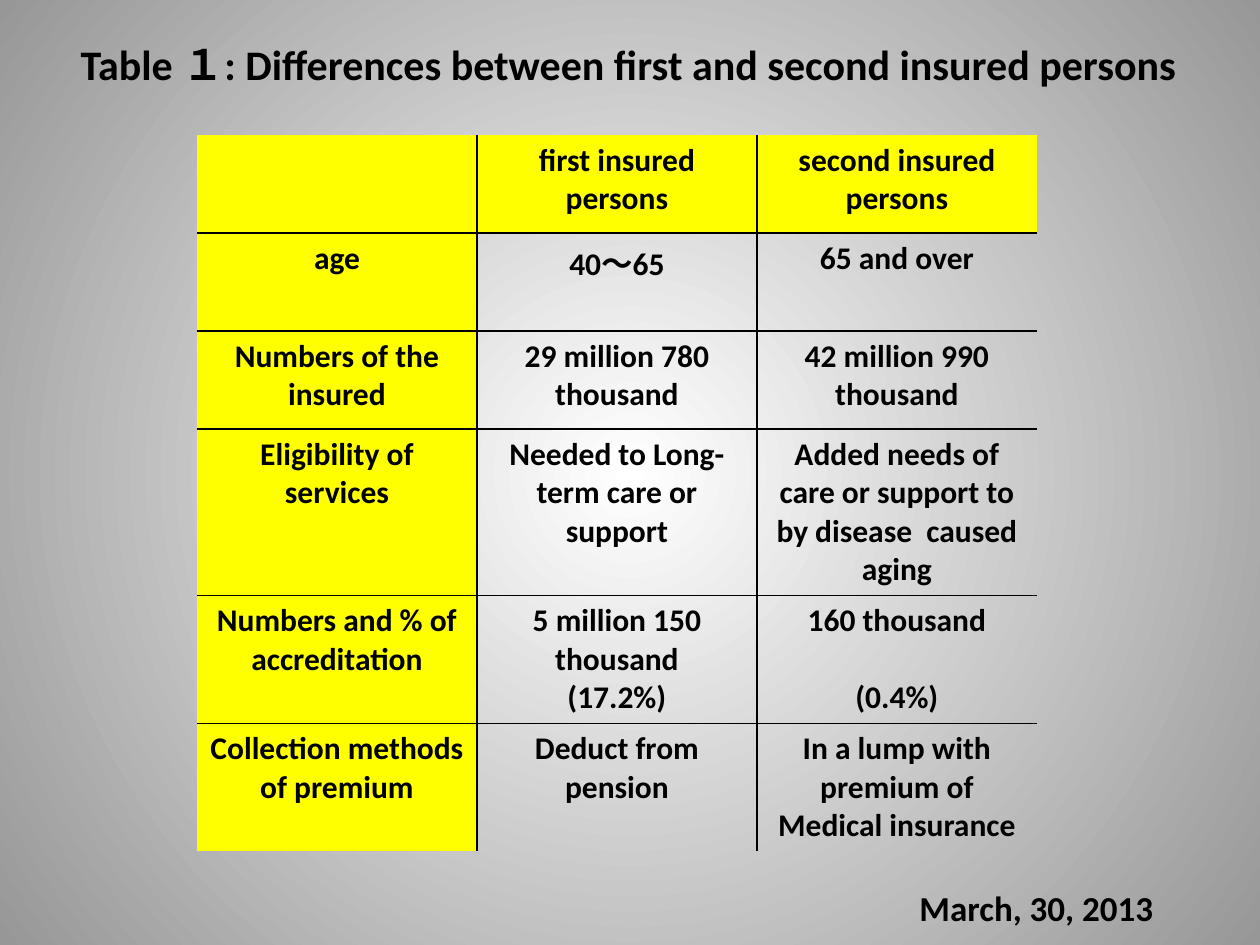
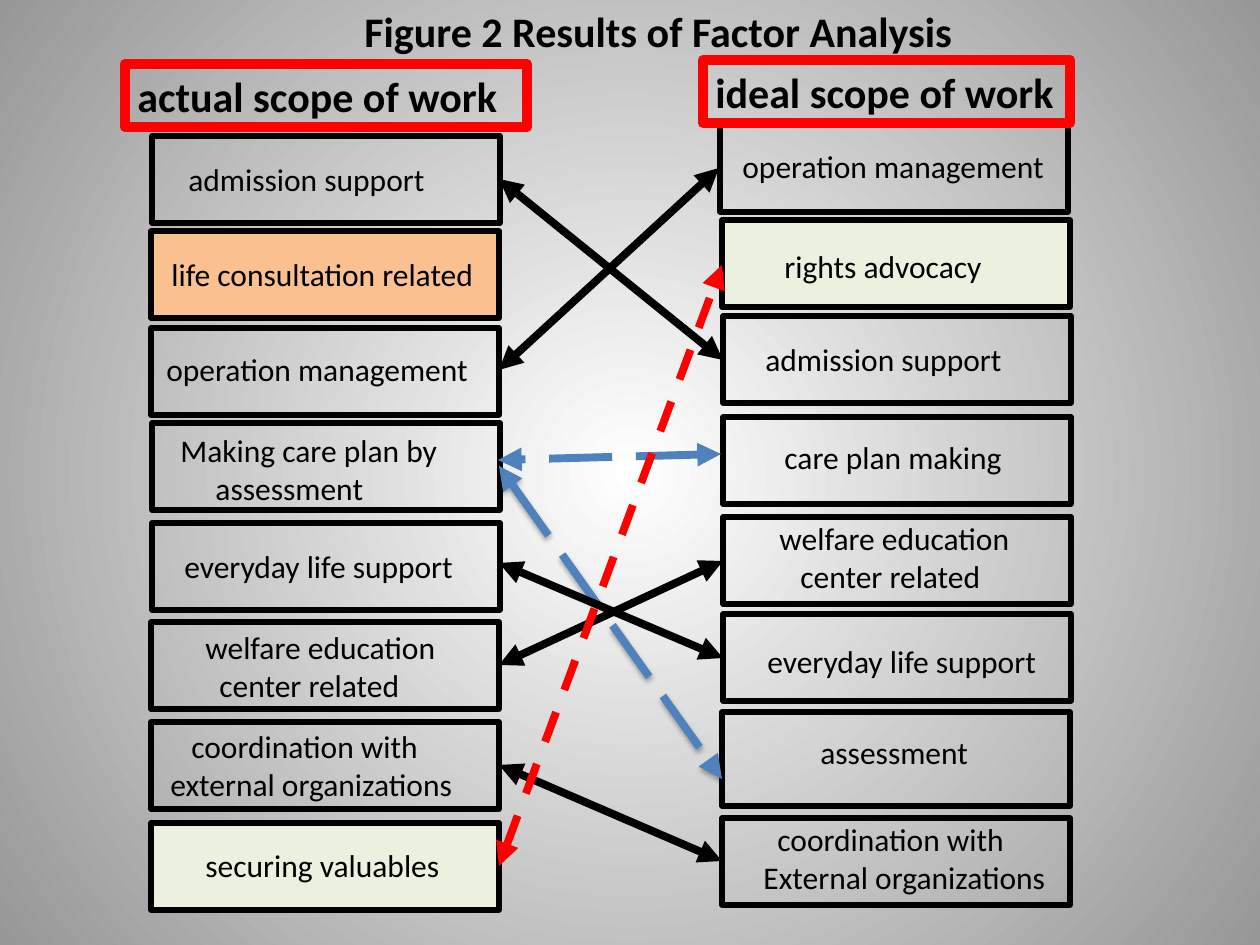
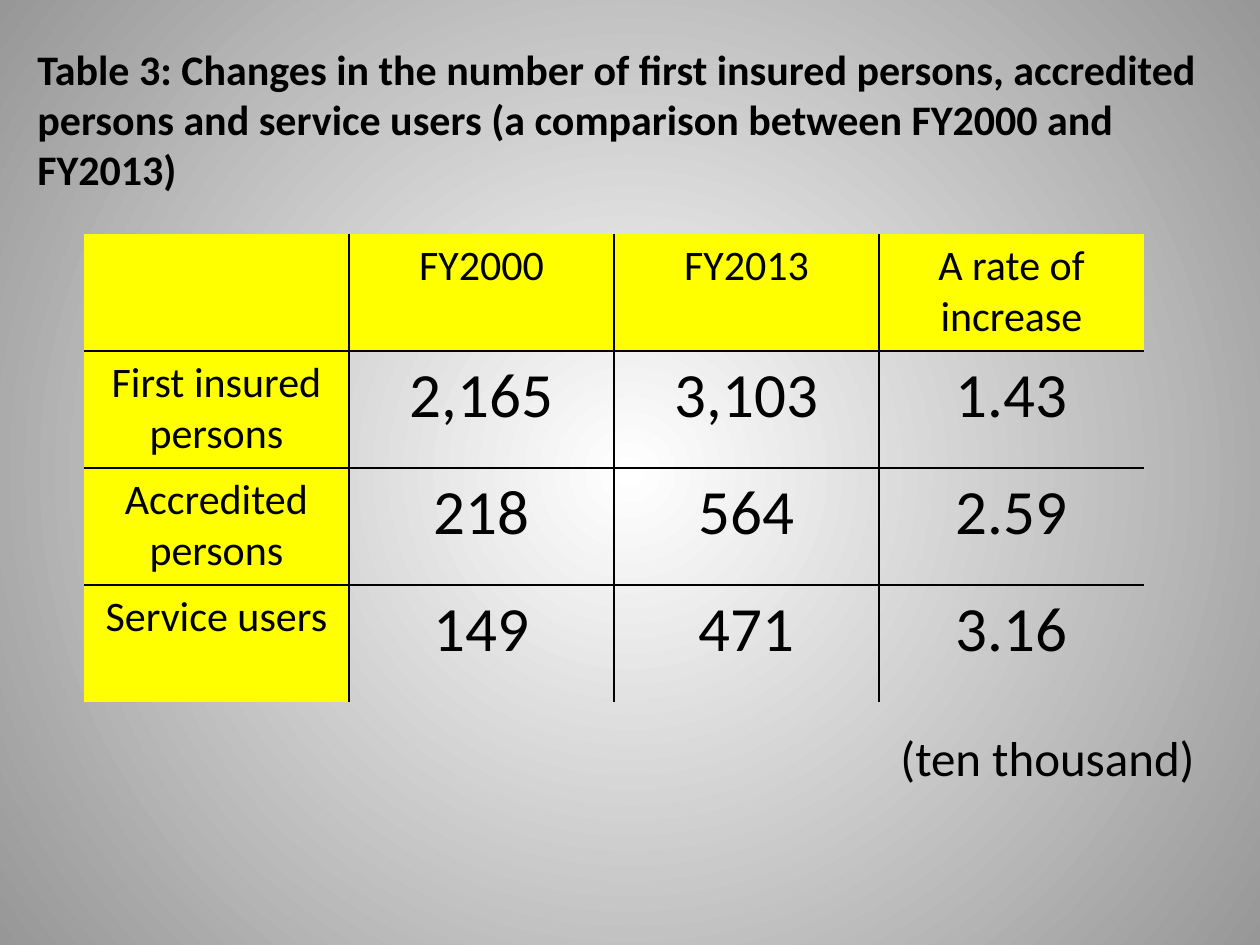
from dataclasses import dataclass

from lxml import etree
from pptx import Presentation
from pptx.dml.color import RGBColor
from pptx.enum.dml import MSO_LINE
from pptx.enum.shapes import MSO_CONNECTOR, MSO_SHAPE
from pptx.enum.text import MSO_AUTO_SIZE, PP_ALIGN
from pptx.oxml.ns import qn
from pptx.util import Emu, Pt

# Shared look
FONT = "Calibri"
BLACK, RED, BLUE = "000000", "FF0000", "4F81BD"
YELLOW, ORANGE, GREEN = "FFFF00", "FAC090", "EBF1DE"
GLOW_CENTRE, GLOW_EDGE = "FFFFFF", "979797"
LEFT, CENTER = PP_ALIGN.LEFT, PP_ALIGN.CENTER
RECTANGLE, STRAIGHT = MSO_SHAPE.RECTANGLE, MSO_CONNECTOR.STRAIGHT
GROW = MSO_AUTO_SIZE.SHAPE_TO_FIT_TEXT
DASH, LONG_DASH = MSO_LINE.DASH, MSO_LINE.LONG_DASH

PAGE_WIDTH, PAGE_HEIGHT = 1260, 945
EMU_PER_PX = 914400 / 126
FACTOR_WIDTH, FACTOR_HEIGHT = 348, 87
LABEL_HEIGHTS = {1: 50, 2: 89}


@dataclass
class Factor:
    left: int
    top: int
    label_left: int
    label_top: int
    label_width: int
    label: str
    indents: tuple[int, ...] = (0, 0)
    fill: str | None = None
    height: int = FACTOR_HEIGHT


@dataclass
class Arrow:
    start: tuple[int, int]
    end: tuple[int, int]
    color: str = BLACK
    dash: MSO_LINE | None = None
    shadow: bool = False


@dataclass
class Grid:
    left: int
    top: int
    column_width: int
    row_height: int
    rows: list[list[str]]
    head_size: int
    body_size: int
    bold: bool = False


# Slide content
INSURED_GRID = Grid(197, 135, 280, 98, [
    ["", "first insured persons", "second insured persons"],
    ["age", "40～65", "65 and over"],
    ["Numbers of the insured", "29 million 780 thousand", "42 million 990 thousand"],
    ["Eligibility of services", "Needed to Long-term care or support",
     "Added needs of care or support to by disease  caused aging"],
    ["Numbers and % of accreditation", "5 million 150 thousand\n(17.2%)",
     "160 thousand\n(0.4%)"],
    ["Collection methods of premium", "Deduct from pension",
     "In a lump with premium of Medical insurance"],
], head_size=18, body_size=18, bold=True)

CHANGE_GRID = Grid(84, 234, 265, 117, [
    ["", "FY2000", "FY2013", "A rate of increase"],
    ["First insured persons", "2,165", "3,103", "1.43"],
    ["Accredited persons", "218", "564", "2.59"],
    ["Service users", "149", "471", "3.16"],
], head_size=24, body_size=36)

ACTUAL_FACTORS = [
    Factor(152, 136, 176, 154, 265, "admission support"),
    Factor(151, 231, 159, 249, 331, "life consultation related", fill=ORANGE),
    Factor(151, 328, 147, 344, 338, "operation management", (7,)),
    Factor(152, 423, 168, 425, 284, "Making care plan by\nassessment", (0, 35)),
    Factor(152, 523, 165, 541, 305, "everyday life support", (7,)),
    Factor(151, 622, 193, 622, 266, "welfare education\ncenter related", (0, 14)),
    Factor(151, 722, 158, 721, 318, "coordination with\nexternal organizations", (21, 0)),
    Factor(151, 823, 193, 840, 262, "securing valuables", fill=GREEN),
]
IDEAL_FACTORS = [
    Factor(720, 125, 730, 141, 331, "operation management"),
    Factor(722, 220, 772, 241, 224, "rights advocacy", fill=GREEN),
    Factor(723, 316, 753, 334, 265, "admission support"),
    Factor(723, 417, 772, 432, 246, "care plan making"),
    Factor(723, 517, 767, 513, 258, "welfare education\ncenter related", (0, 21)),
    Factor(723, 614, 755, 636, 297, "everyday life support"),
    Factor(722, 712, 808, 727, 174, "assessment", height=94),
    Factor(722, 818, 751, 814, 331, "coordination with\nExternal organizations", (14, 0)),
]
ARROWS = [
    Arrow((499, 179), (723, 360)),
    Arrow((499, 370), (719, 168)),
    Arrow((499, 765), (722, 861)),
    Arrow((721, 454), (498, 460), BLUE, LONG_DASH),
    Arrow((499, 466), (722, 779), BLUE, LONG_DASH, shadow=True),
    Arrow((499, 665), (723, 561)),
    Arrow((499, 563), (723, 658)),
    Arrow((499, 866), (722, 265), RED, DASH),
]


# Helpers
def px(length: float) -> Emu:
    return Emu(round(length * EMU_PER_PX))


def rgb(color: str) -> RGBColor:
    return RGBColor.from_string(color)


def set_fill(fill, color: str | None) -> None:
    if color:
        fill.solid()
        fill.fore_color.rgb = rgb(color)
    else:
        fill.background()


def set_line(line, color: str, width: float) -> None:
    line.color.rgb = rgb(color)
    line.width = Pt(width)


def write_text(frame, text: str, *, size: int, bold: bool = False,
               align: PP_ALIGN = LEFT, indents: tuple[int, ...] = (0, 0)) -> None:
    for index, words in enumerate(text.split("\n")):
        para = frame.paragraphs[0] if index == 0 else frame.add_paragraph()
        para.alignment = align
        if indents[index]:
            para._p.get_or_add_pPr().set("marL", str(px(indents[index])))
        span = para.add_run()
        span.text = words
        span.font.name = FONT
        span.font.size = Pt(size)
        span.font.bold = bold
        span.font.color.rgb = rgb(BLACK)


def add_text(page, left: int, top: int, width: int, height: int, text: str, *,
             wrap: bool = False, **text_format):
    box = page.shapes.add_textbox(px(left), px(top), px(width), px(height))
    box.text_frame.word_wrap = wrap
    box.text_frame.auto_size = GROW
    write_text(box.text_frame, text, **text_format)
    return box


def add_heading(page, left: int, top: int, width: int, text: str) -> None:
    box = add_text(page, left, top, width, 63, text, wrap=True, size=24, bold=True)
    set_line(box.line, RED, 6)


def add_factor(page, factor: Factor) -> None:
    box = page.shapes.add_shape(RECTANGLE, px(factor.left), px(factor.top),
                                px(FACTOR_WIDTH), px(factor.height))
    box.shadow.inherit = False
    set_fill(box.fill, factor.fill)
    set_line(box.line, BLACK, 3)
    label_height = LABEL_HEIGHTS[factor.label.count("\n") + 1]
    add_text(page, factor.label_left, factor.label_top, factor.label_width,
             label_height, factor.label, size=18, indents=factor.indents)


def add_arrow(page, arrow: Arrow) -> None:
    connector = page.shapes.add_connector(
        STRAIGHT, *map(px, arrow.start), *map(px, arrow.end))
    set_line(connector.line, arrow.color, 4.5)
    if arrow.dash:
        connector.line.dash_style = arrow.dash
    outline = connector.line._get_or_add_ln()
    for end in ("a:headEnd", "a:tailEnd"):
        etree.SubElement(outline, qn(end), type="triangle")
    effects = etree.SubElement(connector._element.spPr, qn("a:effectLst"))
    if arrow.shadow:
        shadow = etree.SubElement(
            effects, qn("a:outerShdw"), blurRad=str(Pt(3.1)), dist=str(Pt(1.8)),
            dir="5400000", rotWithShape="0")
        shade = etree.SubElement(shadow, qn("a:srgbClr"), val=BLACK)
        etree.SubElement(shade, qn("a:alpha"), val="35000")


def set_borders(cell, sides: dict[str, bool]) -> None:
    properties = cell._tc.get_or_add_tcPr()
    for index, (side, inner) in enumerate(sides.items()):
        border = etree.Element(qn(f"a:{side}"), w=str(Pt(1)))
        if inner:
            paint = etree.SubElement(border, qn("a:solidFill"))
            etree.SubElement(paint, qn("a:srgbClr"), val=BLACK)
        else:
            etree.SubElement(border, qn("a:noFill"))
        properties.insert(index, border)


def add_grid(page, grid: Grid):
    row_count, column_count = len(grid.rows), len(grid.rows[0])
    table = page.shapes.add_table(
        row_count, column_count, px(grid.left), px(grid.top),
        px(grid.column_width * column_count), px(grid.row_height * row_count)).table
    for column in table.columns:
        column.width = px(grid.column_width)
    for row in table.rows:
        row.height = px(grid.row_height)
    for y, texts in enumerate(grid.rows):
        for x, text in enumerate(texts):
            cell = table.cell(y, x)
            is_head = x == 0 or y == 0
            set_fill(cell.fill, YELLOW if is_head else None)
            set_borders(cell, {"lnL": x > 0, "lnR": x < column_count - 1,
                               "lnT": y > 0, "lnB": y < row_count - 1})
            if text:
                write_text(cell.text_frame, text, bold=grid.bold, align=CENTER,
                           size=grid.head_size if is_head else grid.body_size)
    return table


def set_background(master) -> None:
    fill = master.background.fill
    fill.gradient()
    for stop, color in zip(fill.gradient_stops, (GLOW_CENTRE, GLOW_EDGE)):
        stop.color.rgb = rgb(color)
    gradient = master.element.find(f".//{qn('a:gradFill')}")
    gradient.remove(gradient.find(qn("a:lin")))
    glow = etree.SubElement(gradient, qn("a:path"), {"path": "circle"})
    etree.SubElement(glow, qn("a:fillToRect"), dict.fromkeys("ltrb", "50000"))


# Slides
def build_insured_page(page) -> None:
    table = add_grid(page, INSURED_GRID)
    table.cell(4, 2).text_frame.paragraphs[1].space_before = Pt(22)
    add_text(page, -59, 32, 1375, 63,
             "Table １: Differences between first and second insured persons",
             wrap=True, size=24, bold=True, align=CENTER)
    add_text(page, 907, 880, 260, 55, "March, 30, 2013", size=20, bold=True)


def build_factor_page(page) -> None:
    for factor in ACTUAL_FACTORS + IDEAL_FACTORS:
        add_factor(page, factor)
    for arrow in ARROWS:
        add_arrow(page, arrow)
    add_heading(page, 125, 64, 402, "actual scope of work")
    add_heading(page, 703, 60, 367, "ideal scope of work")
    add_text(page, 345, -1, 625, 63, "Figure 2 Results of Factor Analysis",
             size=24, bold=True, indents=(7,))


def build_change_page(page) -> None:
    add_grid(page, CHANGE_GRID)
    add_text(page, 25, 37, 1235, 165,
             "Table 3: Changes in the number of first insured persons, accredited "
             "persons and service users (a comparison between FY2000 and FY2013)",
             wrap=True, size=24, bold=True)
    add_text(page, 888, 721, 324, 72, "(ten thousand)", size=28)


def main() -> None:
    deck = Presentation()
    deck.slide_width, deck.slide_height = px(PAGE_WIDTH), px(PAGE_HEIGHT)
    set_background(deck.slide_master)
    blank = deck.slide_layouts[6]
    for build in (build_insured_page, build_factor_page, build_change_page):
        build(deck.slides.add_slide(blank))
    deck.save("out.pptx")


if __name__ == "__main__":
    main()
